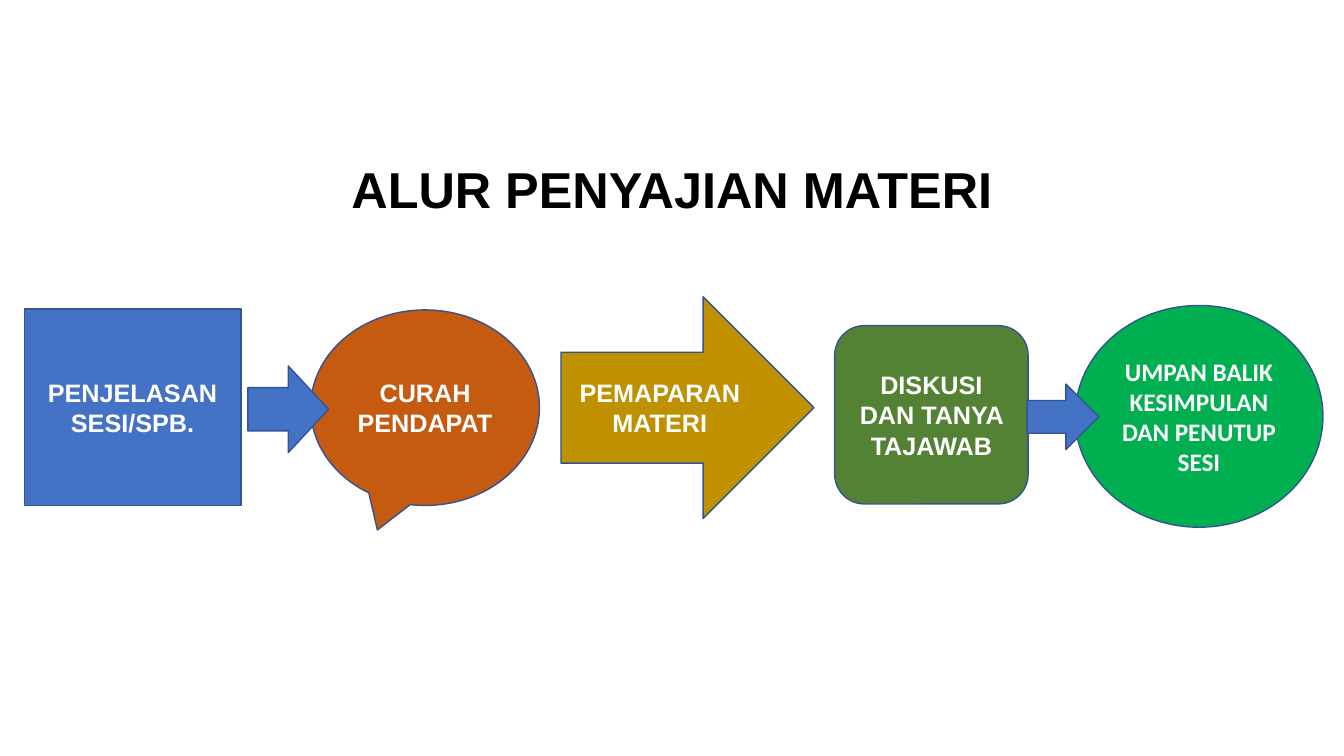
from pptx import Presentation
from pptx.dml.color import RGBColor
from pptx.enum.shapes import MSO_SHAPE
from pptx.enum.text import MSO_ANCHOR, PP_ALIGN
from pptx.util import Pt

BOX = MSO_SHAPE.RECTANGLE
CALLOUT = MSO_SHAPE.OVAL_CALLOUT
RIGHT_ARROW = MSO_SHAPE.RIGHT_ARROW
DOWN_ARROW = MSO_SHAPE.DOWN_ARROW
ROUNDED = MSO_SHAPE.ROUNDED_RECTANGLE
OVAL = MSO_SHAPE.OVAL
MIDDLE = MSO_ANCHOR.MIDDLE
CENTER = PP_ALIGN.CENTER

BLACK = RGBColor(0x00, 0x00, 0x00)
WHITE = RGBColor(0xFF, 0xFF, 0xFF)
BLUE = RGBColor(0x44, 0x72, 0xC4)
OUTLINE = RGBColor(0x32, 0x54, 0x91)
ORANGE = RGBColor(0xC5, 0x5A, 0x11)
GOLD = RGBColor(0xBF, 0x90, 0x00)
OLIVE = RGBColor(0x54, 0x82, 0x35)
GREEN = RGBColor(0x00, 0xB0, 0x50)


def write(shape, text, size=18, font="Arial", color=WHITE, spacing=1.0):
    """Put bold, centred text in the middle of a shape."""
    frame = shape.text_frame
    frame.word_wrap = True
    frame.vertical_anchor = MIDDLE
    paragraph = frame.paragraphs[0]
    paragraph.alignment = CENTER
    paragraph.line_spacing = spacing
    run = paragraph.add_run()
    run.text = text
    run.font.size = Pt(size)
    run.font.name = font
    run.font.bold = True
    run.font.color.rgb = color


class FlowSlide:
    """Holds the current slide and the shared outline style."""

    def __init__(self, deck, outline=OUTLINE, outline_width=1):
        self.slide = deck.slides.add_slide(deck.slide_layouts[6])
        self.outline = outline
        self.outline_width = outline_width

    def title(self, text, left, top, width, height):
        box = self.slide.shapes.add_textbox(Pt(left), Pt(top), Pt(width), Pt(height))
        write(box, text, size=36, color=BLACK, spacing=0.9)

    def shape(self, kind, fill, left, top, width, height):
        shape = self.slide.shapes.add_shape(
            kind, Pt(left), Pt(top), Pt(width), Pt(height))
        shape.shadow.inherit = False
        shape.fill.solid()
        shape.fill.fore_color.rgb = fill
        shape.line.color.rgb = self.outline
        shape.line.width = Pt(self.outline_width)
        return shape

    def step(self, text, kind, fill, *place, font="Arial"):
        write(self.shape(kind, fill, *place), text, font=font)

    def link(self, kind, *place, rotation=0):
        self.shape(kind, BLUE, *place).rotation = rotation


def main():
    deck = Presentation()
    deck.slide_width = Pt(960)
    deck.slide_height = Pt(540)
    flow = FlowSlide(deck)

    flow.title("ALUR PENYAJIAN MATERI", 0, 85, 960, 104.4)

    # Steps two to five, with the link into the closing step
    flow.step("CURAH PENDAPAT", CALLOUT, ORANGE, 221.9, 221.4, 163.5, 139.7)
    flow.step("PEMAPARAN MATERI", RIGHT_ARROW, GOLD, 400.7, 212, 180.7, 158.4)
    flow.step("DISKUSI DAN TANYA TAJAWAB", ROUNDED, OLIVE, 596.2, 232.6, 138.2, 127.4)
    flow.step("UMPAN BALIK KESIMPULAN DAN PENUTUP SESI", OVAL, GREEN,
              767.9, 218.2, 177.1, 158.4, font="Calibri")
    flow.link(DOWN_ARROW, 735.8, 272.2, 46.8, 51.1, rotation=270)

    # Opening step and its link
    flow.step("PENJELASAN SESI/SPB.", BOX, BLUE, 17.3, 220.6, 154.8, 140.4)
    flow.link(RIGHT_ARROW, 177.1, 261.4, 57.6, 61.9)

    deck.save("out.pptx")


if __name__ == "__main__":
    main()
